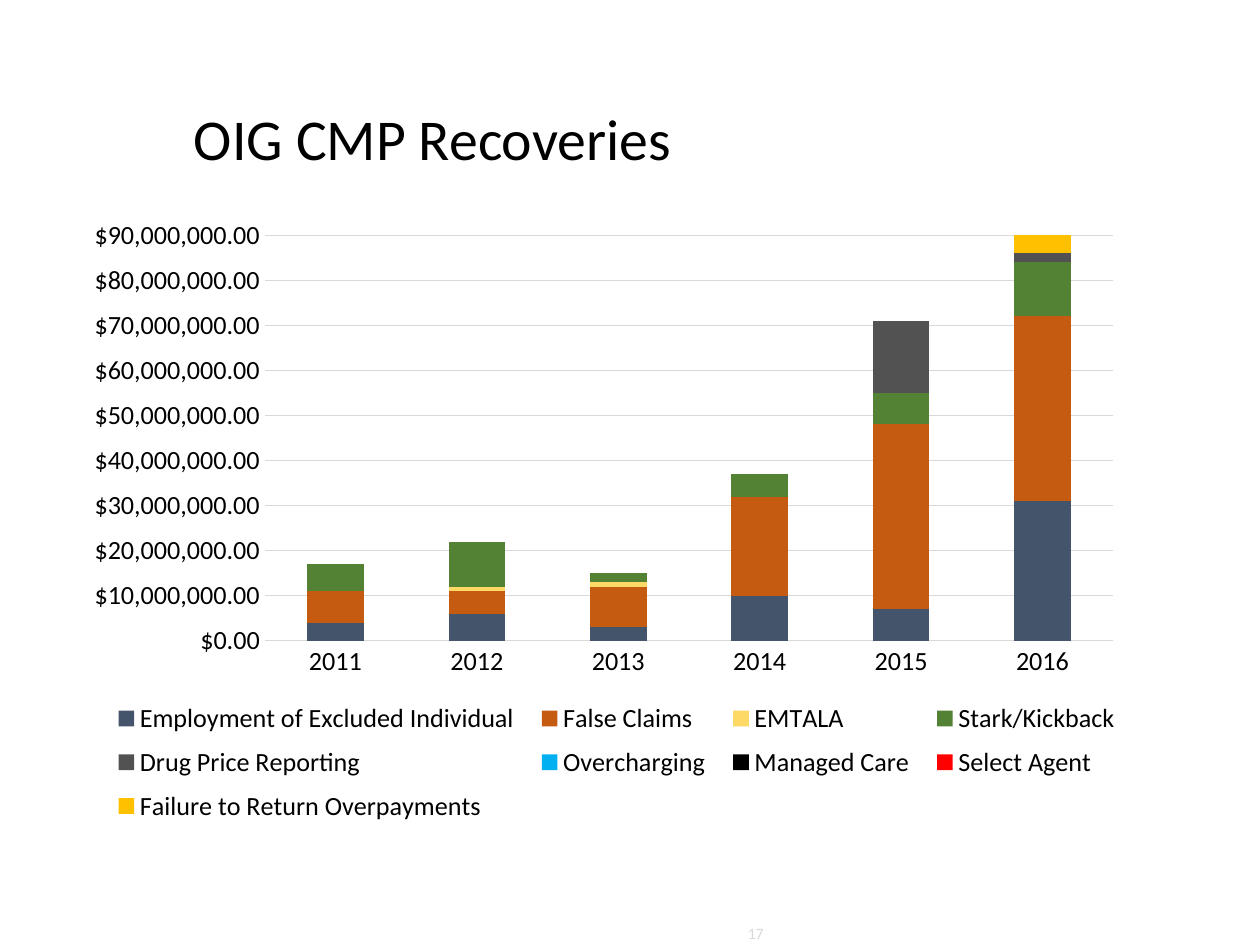
from dataclasses import dataclass

from lxml import etree
from pptx import Presentation
from pptx import util as u
from pptx.chart.data import CategoryChartData
from pptx.dml.color import RGBColor
from pptx.enum import chart as c, text as t
from pptx.oxml import parse_xml
from pptx.oxml.ns import nsdecls, qn

FONT = "Calibri"
COLOURS = {
    "text": "000000", "rule": "D9D9D9", "slate": "44546A", "rust": "C55A11",
    "straw": "FFD966", "green": "548235", "grey": "525252", "sky": "00B0F0",
    "black": "000000", "red": "FF0000", "gold": "FFC000",
}
YEARS = ["2011", "2012", "2013", "2014", "2015", "2016"]
MILLION = 1_000_000
DOLLAR_FORMAT = '"$"#,##0.00'


@dataclass
class Box:
    left: float
    top: float
    width: float
    height: float

    def lengths(self) -> list:
        return [u.Inches(n) for n in (self.left, self.top, self.width, self.height)]


@dataclass
class Label:
    box: Box
    words: str
    size: float
    colour: str
    align: t.PP_ALIGN
    line_spacing: float = 1.0
    tab: float = 0


@dataclass
class Recovery:
    name: str
    colour: str
    millions: list


# Areas inside the chart, as fractions of its size
PLOT_AREA = Box(0.16, 0.04, 0.82, 0.65)
LEGEND_AREA = Box(0, 0.77, 1, 0.23)

LABELS = [
    Label(Box(0.69, 0.4, 8.62, 1.45), "\tOIG CMP Recoveries", 33, "text",
          t.PP_ALIGN.LEFT, line_spacing=0.9, tab=0.75),
    Label(Box(3.83, 7.31, 2.33, 0.2), "17", 9, "rule", t.PP_ALIGN.RIGHT),
]
RECOVERIES = [
    Recovery("Employment of Excluded Individual", "slate", [4, 6, 3, 10, 7, 31]),
    Recovery("False Claims", "rust", [7, 5, 9, 22, 41, 41]),
    Recovery("EMTALA", "straw", [0, 1, 1, 0, 0, 0]),
    Recovery("Stark/Kickback", "green", [6, 10, 2, 5, 7, 12]),
    Recovery("Drug Price Reporting", "grey", [0, 0, 0, 0, 16, 2]),
    Recovery("Overcharging", "sky", [0, 0, 0, 0, 0, 0]),
    Recovery("Managed Care", "black", [0, 0, 0, 0, 0, 0]),
    Recovery("Select Agent", "red", [0, 0, 0, 0, 0, 0]),
    Recovery("Failure to Return Overpayments", "gold", [0, 0, 0, 0, 0, 5]),
]


def rgb(name: str) -> RGBColor:
    return RGBColor.from_string(COLOURS[name])


def style_font(font, size: float, colour: str) -> None:
    font.name = FONT
    font.size = u.Pt(size)
    font.color.rgb = rgb(colour)


def style_line(line) -> None:
    line.color.rgb = rgb("rule")
    line.width = u.Pt(0.75)


def add_label(slide, label: Label) -> None:
    shape = slide.shapes.add_textbox(*label.box.lengths())
    frame = shape.text_frame
    frame.word_wrap = True
    frame.vertical_anchor = t.MSO_ANCHOR.MIDDLE
    paragraph = frame.paragraphs[0]
    paragraph.alignment = label.align
    paragraph.line_spacing = label.line_spacing
    if label.tab:
        stops = etree.SubElement(paragraph._p.get_or_add_pPr(), qn("a:tabLst"))
        etree.SubElement(stops, qn("a:tab"), pos=str(u.Inches(label.tab)), algn="l")
    run = paragraph.add_run()
    run.text = label.words
    style_font(run.font, label.size, label.colour)


def place_part(element, area: Box, index: int, target: str = "") -> None:
    """Fix a chart part at an area given in fractions of the chart."""
    sizes = {"x": area.left, "y": area.top, "w": area.width, "h": area.height}
    modes = "".join(f'<c:{side}Mode val="edge"/>' for side in "xy")
    values = "".join(f'<c:{key} val="{value}"/>' for key, value in sizes.items())
    layout = parse_xml(
        f'<c:layout {nsdecls("c")}><c:manualLayout>{target}{modes}{values}'
        "</c:manualLayout></c:layout>")
    for old in element.findall(qn("c:layout")):
        element.remove(old)
    element.insert(index, layout)


def add_recoveries_chart(slide, box: Box) -> None:
    data = CategoryChartData(number_format=DOLLAR_FORMAT)
    data.categories = YEARS
    for recovery in RECOVERIES:
        data.add_series(recovery.name, [n * MILLION for n in recovery.millions])
    chart = slide.shapes.add_chart(
        c.XL_CHART_TYPE.COLUMN_STACKED, *box.lengths(), data).chart
    chart.has_title = False
    style_font(chart.font, 10, "text")

    # Stacked columns
    plot = chart.plots[0]
    plot.gap_width = 150
    plot.overlap = 100
    plot.vary_by_categories = False
    for series, recovery in zip(plot.series, RECOVERIES):
        series.format.fill.solid()
        series.format.fill.fore_color.rgb = rgb(recovery.colour)

    # Axes and gridlines
    years, dollars = chart.category_axis, chart.value_axis
    for axis in (years, dollars):
        axis.major_tick_mark = axis.minor_tick_mark = c.XL_TICK_MARK.NONE
        style_font(axis.tick_labels.font, 15, "text")
    style_line(years.format.line)
    dollars.format.line.fill.background()
    dollars.minimum_scale = 0
    dollars.maximum_scale = 90 * MILLION
    dollars.major_unit = 10 * MILLION
    dollars.tick_labels.number_format = DOLLAR_FORMAT
    dollars.tick_labels.number_format_is_linked = False
    dollars.has_major_gridlines = True
    style_line(dollars.major_gridlines.format.line)

    # Legend
    chart.has_legend = True
    chart.legend.position = c.XL_LEGEND_POSITION.BOTTOM
    chart.legend.include_in_layout = False
    style_font(chart.legend.font, 15, "text")

    # Layout of plot and legend
    place_part(chart._chartSpace.chart.plotArea, PLOT_AREA, 0,
               '<c:layoutTarget val="inner"/>')
    place_part(chart.legend._element, LEGEND_AREA, 1)


def main() -> None:
    presentation = Presentation()
    presentation.slide_width = u.Inches(10)
    presentation.slide_height = u.Inches(7.5)
    slide = presentation.slides.add_slide(presentation.slide_layouts[6])
    add_recoveries_chart(slide, Box(0.75, 1.67, 8.25, 4.95))
    # Title and page number
    for label in LABELS:
        add_label(slide, label)
    presentation.save("out.pptx")


if __name__ == "__main__":
    main()
